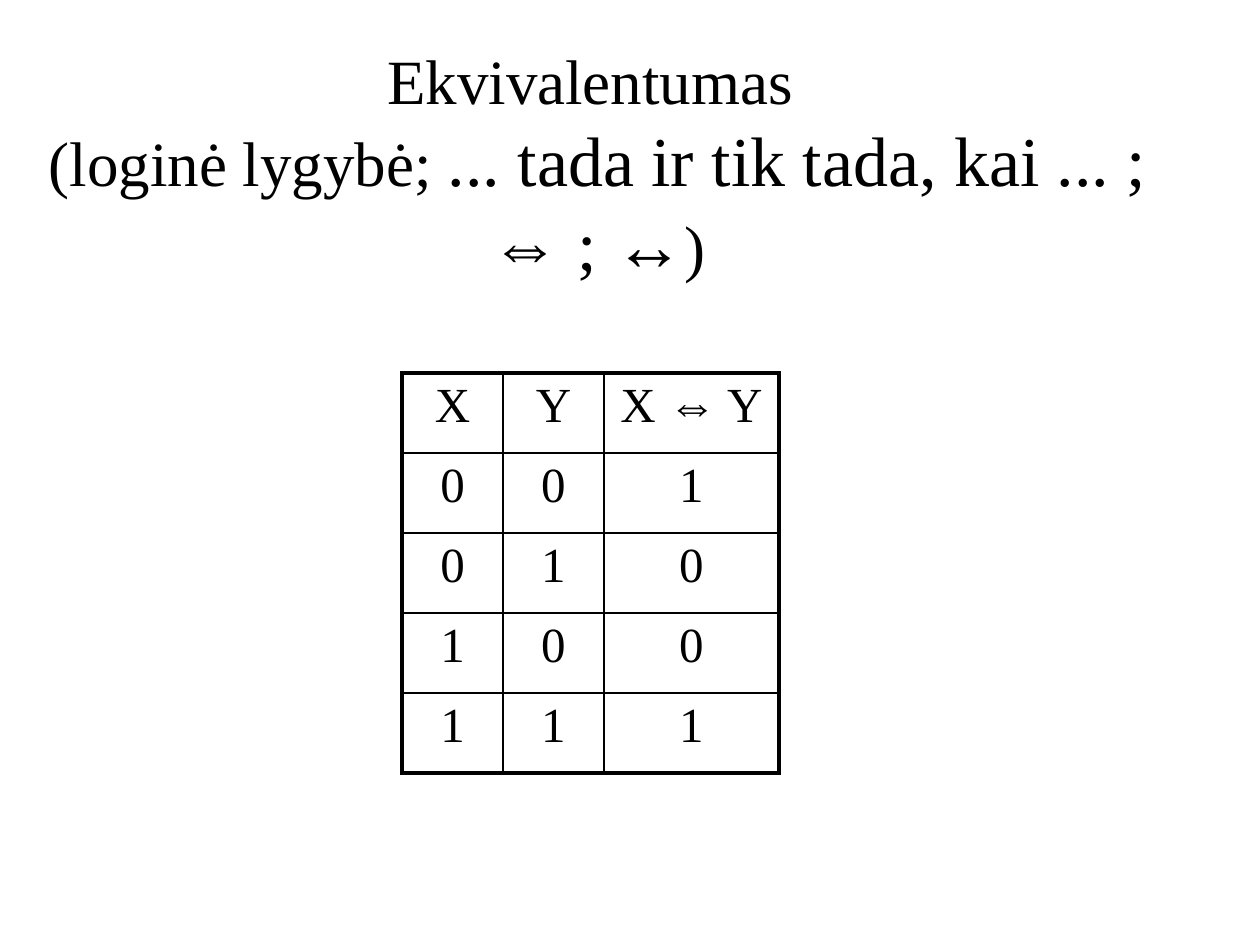
from lxml.etree import SubElement
from pptx import Presentation
from pptx.dml.color import RGBColor
from pptx.enum.text import MSO_ANCHOR, MSO_AUTO_SIZE, PP_ALIGN
from pptx.oxml.ns import qn
from pptx.util import Pt

PX = 914400 // 126
FONT = "Times New Roman"
COLORS = {"ink": "000000"}
THIN, THICK = 1, 2.25

TITLE_BOX = (0, 84, 1196, 158)
TITLE_LINES = [
    [("Ekvivalentumas ", 36)],
    [("(loginė lygybė; ", 36), ("... tada ir tik tada, kai ... ;", 40),
     (" ", 36), ("⇔ ; ↔", 40), (")", 36)],
]

TABLE_LEFT, TABLE_TOP = 402, 373
COL_WIDTHS = (101, 101, 175)
ROW_HEIGHT = 80
TRUTH_TABLE = [
    ("X", "Y", "X ⇔ Y"),
    ("0", "0", "1"),
    ("0", "1", "0"),
    ("1", "0", "0"),
    ("1", "1", "1"),
]


def add_run(p, text, size):
    r = p.add_run()
    r.text = text
    for name, value in {"name": FONT, "size": Pt(size), "bold": False}.items():
        setattr(r.font, name, value)
    r.font.color.rgb = RGBColor.from_string(COLORS["ink"])


def set_borders(cell, widths):
    """Draw the cell's edges; widths maps L, R, T, B to points."""
    tc_pr = cell._tc.get_or_add_tcPr()
    for side, width in widths.items():
        ln = SubElement(tc_pr, qn(f"a:ln{side}"), w=str(Pt(width)))
        fill = SubElement(ln, qn("a:solidFill"))
        SubElement(fill, qn("a:srgbClr"), val=COLORS["ink"])


def add_title(s):
    title = s.shapes.title
    for name, px in zip(("left", "top", "width", "height"), TITLE_BOX):
        setattr(title, name, px * PX)
    tf = title.text_frame
    layout = {"word_wrap": True, "auto_size": MSO_AUTO_SIZE.NONE,
              "vertical_anchor": MSO_ANCHOR.MIDDLE}
    for name, value in layout.items():
        setattr(tf, name, value)
    p = tf.paragraphs[0]
    p.alignment = PP_ALIGN.CENTER
    for i, line in enumerate(TITLE_LINES):
        if i:
            p.add_line_break()
        for text, size in line:
            add_run(p, text, size)


def add_truth_table(s):
    n_rows, n_cols = len(TRUTH_TABLE), len(COL_WIDTHS)
    table = s.shapes.add_table(
        n_rows, n_cols, TABLE_LEFT * PX, TABLE_TOP * PX,
        sum(COL_WIDTHS) * PX, n_rows * ROW_HEIGHT * PX).table
    table.first_row = table.horz_banding = False
    for col, width in zip(table.columns, COL_WIDTHS):
        col.width = width * PX
    for i, values in enumerate(TRUTH_TABLE):
        table.rows[i].height = ROW_HEIGHT * PX
        for j, value in enumerate(values):
            cell = table.cell(i, j)
            outer = {"L": j == 0, "R": j == n_cols - 1,
                     "T": i == 0, "B": i == n_rows - 1}
            set_borders(cell, {k: THICK if v else THIN for k, v in outer.items()})
            cell.fill.background()
            p = cell.text_frame.paragraphs[0]
            p.alignment = PP_ALIGN.CENTER
            before = SubElement(p._p.get_or_add_pPr(), qn("a:spcBef"))
            SubElement(before, qn("a:spcPct"), val="20000")
            add_run(p, value, 28)


def main():
    prs = Presentation()
    prs.slide_width, prs.slide_height = 1260 * PX, 945 * PX
    s = prs.slides.add_slide(prs.slide_layouts[5])
    add_title(s)
    add_truth_table(s)
    prs.save("out.pptx")


if __name__ == "__main__":
    main()
